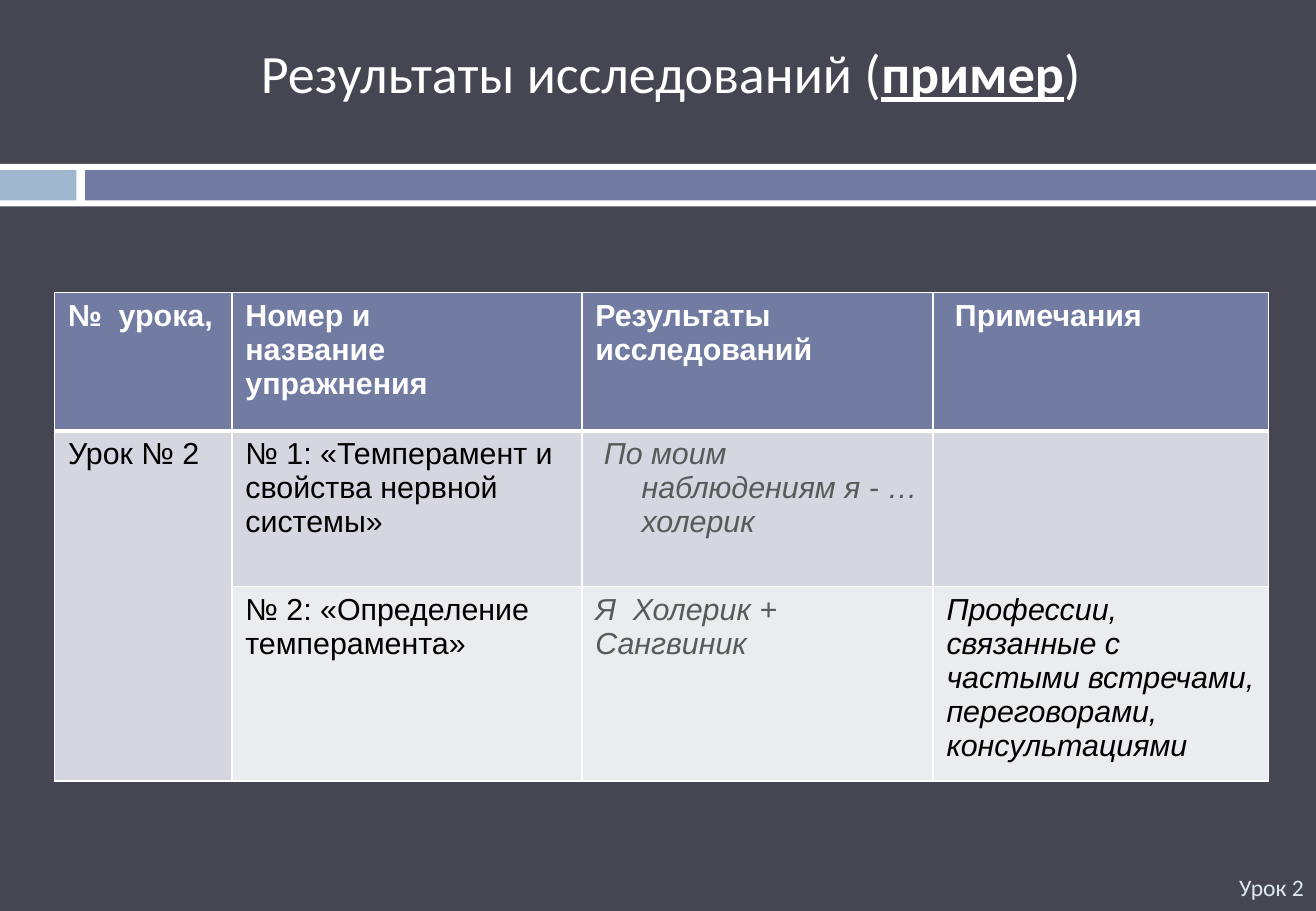
from dataclasses import dataclass

import lxml.etree
import pptx
import pptx.dml.color
import pptx.enum.shapes
import pptx.enum.text
import pptx.oxml.ns
import pptx.util

PX = 9144  # one px is a hundredth of an inch
ALIGN = pptx.enum.text.PP_ALIGN
ANCHOR = pptx.enum.text.MSO_ANCHOR


@dataclass(frozen=True)
class Theme:
    background: str = "464653"
    white: str = "FFFFFF"
    accent: str = "727CA3"
    light_accent: str = "9FB8CD"
    footer: str = "DDE9EC"
    black: str = "000000"
    grey: str = "595959"
    first_band: str = "D5D7E0"
    second_band: str = "EBECF0"
    heading_font: str = "Calibri"
    table_font: str = "Arial"
    title_size: int = 32
    table_size: int = 18
    footer_size: int = 14


THEME = Theme()


@dataclass(frozen=True)
class Box:
    left: int
    top: int
    width: int
    height: int

    def emu(self) -> tuple[int, int, int, int]:
        return self.left * PX, self.top * PX, self.width * PX, self.height * PX


@dataclass(frozen=True)
class Band:
    box: Box
    color: str


@dataclass(frozen=True)
class Entry:
    lines: tuple[str, ...] = ()
    color: str = THEME.black
    bold: bool = False
    italic: bool = False
    hanging: int = 0


@dataclass(frozen=True)
class Row:
    height: int
    fill: str
    entries: tuple[Entry, ...]
    top_line: int = 1
    bottom_line: int = 1


def heading(*lines: str) -> Entry:
    return Entry(lines, color=THEME.white, bold=True)


BANDS = (
    Band(Box(0, 135, 1083, 35), THEME.white),
    Band(Box(0, 140, 63, 25), THEME.light_accent),
    Band(Box(70, 140, 1013, 25), THEME.accent),
)
COLUMN_WIDTHS = (146, 288, 289, 276)
ROWS = (
    Row(114, THEME.accent, (
        heading("№  урока,"),
        heading("Номер и", "название  упражнения"),
        heading("Результаты", "исследований"),
        heading(" Примечания"),
    ), bottom_line=3),
    Row(128, THEME.first_band, (
        Entry(("Урок № 2",)),
        Entry(("№ 1: «Темперамент и свойства нервной системы»",)),
        Entry((" По моим наблюдениям я - … холерик",), color=THEME.grey, italic=True, hanging=38),
        Entry(),
    ), top_line=3),
    Row(138, THEME.second_band, (
        Entry(),
        Entry(("№ 2: «Определение темперамента»",)),
        Entry(("Я  Холерик + Сангвиник",), color=THEME.grey, italic=True),
        Entry(("Профессии, связанные с частыми встречами, переговорами, консультациями",), italic=True),
    )),
)


def rgb(color: str) -> pptx.dml.color.RGBColor:
    return pptx.dml.color.RGBColor.from_string(color)


def add_text(paragraph, text: str, *, size: int, font: str, color: str,
             bold: bool = False, italic: bool = False, underline: bool = False) -> None:
    run = paragraph.add_run()
    run.text = text
    run.font.size = pptx.util.Pt(size)
    run.font.name = font
    run.font.color.rgb = rgb(color)
    run.font.bold, run.font.italic, run.font.underline = bold, italic, underline


def set_hanging(paragraph, px: int) -> None:
    properties = paragraph._p.get_or_add_pPr()
    properties.set("marL", str(px * PX))
    properties.set("indent", str(-px * PX))


def add_band(slide, band: Band) -> None:
    shape = slide.shapes.add_shape(pptx.enum.shapes.MSO_SHAPE.RECTANGLE, *band.box.emu())
    shape.shadow.inherit = False
    shape.fill.solid()
    shape.fill.fore_color.rgb = rgb(band.color)
    shape.line.fill.background()


def add_text_box(slide, box: Box, align: ALIGN, anchor: ANCHOR):
    frame = slide.shapes.add_textbox(*box.emu()).text_frame
    frame.word_wrap = True
    frame.vertical_anchor = anchor
    frame.paragraphs[0].alignment = align
    return frame.paragraphs[0]


def set_borders(cell, row: Row) -> None:
    properties = cell._tc.get_or_add_tcPr()
    widths = {"lnL": 1, "lnR": 1, "lnT": row.top_line, "lnB": row.bottom_line}
    for side, width in widths.items():
        line = lxml.etree.SubElement(properties, pptx.oxml.ns.qn(f"a:{side}"),
                                     w=str(pptx.util.Pt(width)))
        fill = lxml.etree.SubElement(line, pptx.oxml.ns.qn("a:solidFill"))
        lxml.etree.SubElement(fill, pptx.oxml.ns.qn("a:srgbClr"), val=THEME.white)


def fill_cell(cell, entry: Entry, row: Row) -> None:
    set_borders(cell, row)
    cell.fill.solid()
    cell.fill.fore_color.rgb = rgb(row.fill)
    cell.margin_left = cell.margin_right = 11 * PX
    cell.margin_top = cell.margin_bottom = 5 * PX
    for index, text in enumerate(entry.lines):
        frame = cell.text_frame
        paragraph = frame.add_paragraph() if index else frame.paragraphs[0]
        if entry.hanging:
            set_hanging(paragraph, entry.hanging)
        add_text(paragraph, text, size=THEME.table_size, font=THEME.table_font,
                 color=entry.color, bold=entry.bold, italic=entry.italic)


def add_results_table(slide, left: int, top: int) -> None:
    box = Box(left, top, sum(COLUMN_WIDTHS), sum(row.height for row in ROWS))
    table = slide.shapes.add_table(len(ROWS), len(COLUMN_WIDTHS), *box.emu()).table
    table.first_row = table.horz_banding = False
    for column, width in zip(table.columns, COLUMN_WIDTHS):
        column.width = width * PX
    for row_index, row in enumerate(ROWS):
        table.rows[row_index].height = row.height * PX
        for column_index, entry in enumerate(row.entries):
            fill_cell(table.cell(row_index, column_index), entry, row)
    table.cell(1, 0).merge(table.cell(2, 0))


def main() -> None:
    presentation = pptx.Presentation()
    presentation.slide_width, presentation.slide_height = 1083 * PX, 750 * PX
    slide = presentation.slides.add_slide(presentation.slide_layouts[6])
    slide.background.fill.solid()
    slide.background.fill.fore_color.rgb = rgb(THEME.background)

    # Divider bands
    for band in BANDS:
        add_band(slide, band)

    # Footer
    footer = add_text_box(slide, Box(441, 710, 642, 40), ALIGN.RIGHT, ANCHOR.MIDDLE)
    add_text(footer, "Урок 2", size=THEME.footer_size, font=THEME.heading_font, color=THEME.footer)

    # Title
    title = add_text_box(slide, Box(69, 28, 966, 114), ALIGN.CENTER, ANCHOR.TOP)
    title.space_before = pptx.util.Pt(7)
    set_hanging(title, 35)
    for text, strong in (("Результаты исследований (", False), ("пример", True), (")", False)):
        add_text(title, text, size=THEME.title_size, font=THEME.heading_font,
                 color=THEME.white, bold=strong, underline=strong)

    # Results table
    add_results_table(slide, 45, 241)

    presentation.save("out.pptx")


if __name__ == "__main__":
    main()
